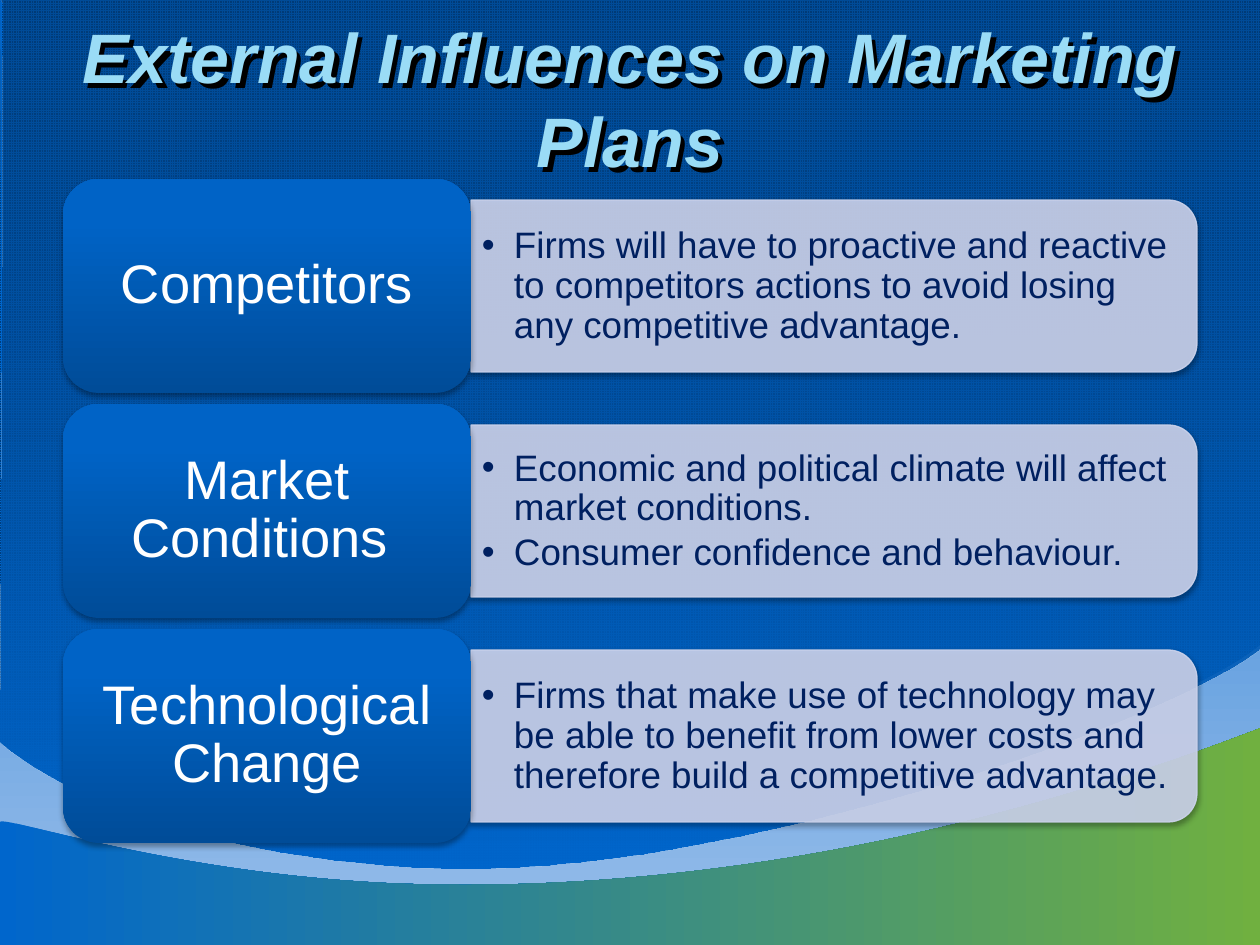
from lxml.etree import SubElement
from pptx import Presentation
from pptx.dml.color import RGBColor as RGB
from pptx.enum.dml import MSO_PATTERN as PATTERN
from pptx.enum.shapes import MSO_SHAPE as SHAPE
from pptx.enum.text import MSO_ANCHOR as ANCHOR, MSO_AUTO_SIZE as AUTO, PP_ALIGN as ALIGN
from pptx.oxml import parse_xml
from pptx.oxml.ns import nsdecls, qn
from pptx.util import Emu, Pt

PX = 914400 / 126
BLUE = RGB(0x00, 0x66, 0xCC)
NAVY = RGB(0x00, 0x3D, 0x7B)
DEEP = RGB(0x00, 0x3A, 0x75)
GREEN = RGB(0x70, 0xB0, 0x40)
PALE = RGB(0x98, 0xBE, 0xEA)
SKY = RGB(0x9A, 0xDC, 0xF6)
PANEL = RGB(0xCC, 0xD3, 0xEC)
INK = RGB(0x00, 0x20, 0x60)
WHITE = RGB(0xFF, 0xFF, 0xFF)
CARD = [(0, RGB(0x00, 0x4C, 0x98), 100), (80, RGB(0x00, 0x63, 0xC6), 100),
        (100, RGB(0x00, 0x63, 0xC7), 100)]
SHADE = ('<a:outerShdw {} blurRad="{}" dist="{}" dir="{}" algn="ctr" rotWithShape="0">'
         '<a:srgbClr val="000000"><a:alpha val="{}"/></a:srgbClr></a:outerShdw>')

# Whole pixels to EMU
px = {n: Emu(round(n * PX)) for n in range(-100, 1300)}


def grade(shape, angle, stops):
    """Fill a shape with a gradient of (position, colour, opacity) stops."""
    shape.fill.background()
    props = shape._element.spPr
    marks = "".join(
        f'<a:gs pos="{pos * 1000}"><a:srgbClr val="{color}">'
        f'<a:alpha val="{alpha * 1000}"/></a:srgbClr></a:gs>'
        for pos, color, alpha in stops)
    props.replace(props.find(qn("a:noFill")), parse_xml(
        f'<a:gradFill {nsdecls("a")} rotWithShape="1"><a:gsLst>{marks}</a:gsLst>'
        f'<a:lin ang="{angle * 60000}" scaled="0"/></a:gradFill>'))


def write(shape, lines, size, color, pad, align=ALIGN.LEFT, bold=False,
          italic=False, space=1.0, after=0, bullet=False):
    """Set the lines of a shape, one paragraph each, with their format."""
    frame = shape.text_frame
    frame.word_wrap = True
    frame.auto_size = AUTO.NONE
    frame.vertical_anchor = ANCHOR.MIDDLE
    frame.margin_left = frame.margin_right = px[pad[0]]
    frame.margin_top = frame.margin_bottom = px[pad[1]]
    frame.text = "\n".join(lines)
    for para in frame.paragraphs:
        para.alignment = align
        para.line_spacing = space
        para.space_before = Pt(0)
        para.space_after = Pt(after)
        if bullet:
            props = para._p.get_or_add_pPr()
            props.set("marL", str(px[32]))
            props.set("indent", str(px[-32]))
            SubElement(props, qn("a:buFont"), typeface="Arial")
            SubElement(props, qn("a:buChar"), char="•")
        font = para.runs[0].font
        font.name, font.size = "Arial", Pt(size)
        font.bold, font.italic = bold, italic
        font.color.rgb = color


deck = Presentation()
deck.slide_width, deck.slide_height = px[1260], px[945]
slide = deck.slides.add_slide(deck.slide_layouts[5])
shapes = slide.shapes
title = shapes.title

# Background
back = slide.background.fill
back.gradient()
back.gradient_angle = 270
for stop, color in zip(back.gradient_stops, (BLUE, PALE)):
    stop.color.rgb = color

# Waves: a start, two curves of three points each, then straight corners
waves = [
    [(-2, 740), (13, 755), (139, 854), (431, 867), (723, 879), (1181, 714),
     (1261, 644), (1261, -2), (0, 0), (1, 2)],
    [(0, 742), (15, 757), (140, 855), (433, 868), (726, 881), (1182, 717),
     (1264, 645), (1264, 0), (1, 1), (3, 4)],
    [(0, 822), (4, 815), (164, 872), (386, 883), (608, 893), (911, 863),
     (1261, 728), (1260, 949), (-2, 948)],
]
forms = []
for dots in waves:
    pen = shapes.build_freeform(*dots[0], scale=PX)
    pen.add_line_segments(dots[1:], close=True)
    form = pen.convert_to_shape()
    # Each three of the first six points become one curve
    sides = list(form._element.spPr.iter(qn("a:lnTo")))
    for first in (0, 3):
        trio = sides[first:first + 3]
        bend = parse_xml(f'<a:cubicBezTo {nsdecls("a")}/>')
        trio[0].addprevious(bend)
        for side in trio:
            bend.append(side[0])
            side.getparent().remove(side)
    form.shadow.inherit = False
    form.line.fill.background()
    forms.append(form)

grid, tint, hill = forms
grid.fill.patterned()
grid.fill.pattern = PATTERN.SMALL_GRID
grid.fill.fore_color.rgb, grid.fill.back_color.rgb = BLUE, NAVY
grade(tint, 90, [(0, DEEP, 60), (100, BLUE, 100)])
grade(hill, 0, [(0, BLUE, 100), (100, GREEN, 100)])

# Title, in front of the waves
shapes._spTree.append(title._element)
title.left, title.top, title.width, title.height = px[63], px[38], px[1134], px[120]
write(title, ["External Influences on Marketing Plans"], 40, SKY, (13, 6),
      align=ALIGN.CENTER, bold=True, italic=True)
title.fill.background()
title.shadow.inherit = False
title._element.spPr.find(qn("a:effectLst")).append(
    parse_xml(SHADE.format(nsdecls("a"), 0, 45000, 2700000, 100000)))

# Rows: a panel with its list, and a card with its heading
rows = [
    ("Competitors",
     ["Firms will have to proactive and reactive to competitors actions to avoid "
      "losing any competitive advantage."]),
    ("Market Conditions ",
     ["Economic and political climate will affect market conditions.",
      "Consumer confidence and behaviour."]),
    ("Technological Change",
     ["Firms that make use of technology may be able to benefit from lower costs "
      "and therefore build a competitive advantage."]),
]
for i, (head, points) in enumerate(rows):
    mid = 286 + 225 * i
    # The panel is upright and turned about its centre
    panel = shapes.add_shape(SHAPE.ROUND_2_SAME_RECTANGLE, px[748], px[mid - 363],
                             px[172], px[726])
    panel.rotation = 90
    panel.fill.solid()
    panel.fill.fore_color.rgb = panel.line.color.rgb = PANEL
    panel.line.width = Pt(0.75)
    for tone in panel._element.spPr.iter(qn("a:srgbClr")):
        SubElement(tone, qn("a:alpha"), val="90000")

    body = shapes.add_textbox(px[471], px[mid - 77], px[717], px[155])
    write(body, points, 21, INK, (11, 5), space=0.9, after=3, bullet=True)

    card = shapes.add_shape(SHAPE.ROUNDED_RECTANGLE, px[63], px[mid - 107],
                            px[408], px[214])
    grade(card, 270, CARD)
    card.line.fill.background()
    write(card, [head], 31, WHITE, (27, 18), align=ALIGN.CENTER, space=0.9)

    for shape in (panel, card):
        shape.shadow.inherit = False
        shape._element.spPr.find(qn("a:effectLst")).append(
            parse_xml(SHADE.format(nsdecls("a"), 40000, 23000, 5400000, 35000)))

deck.save("out.pptx")
